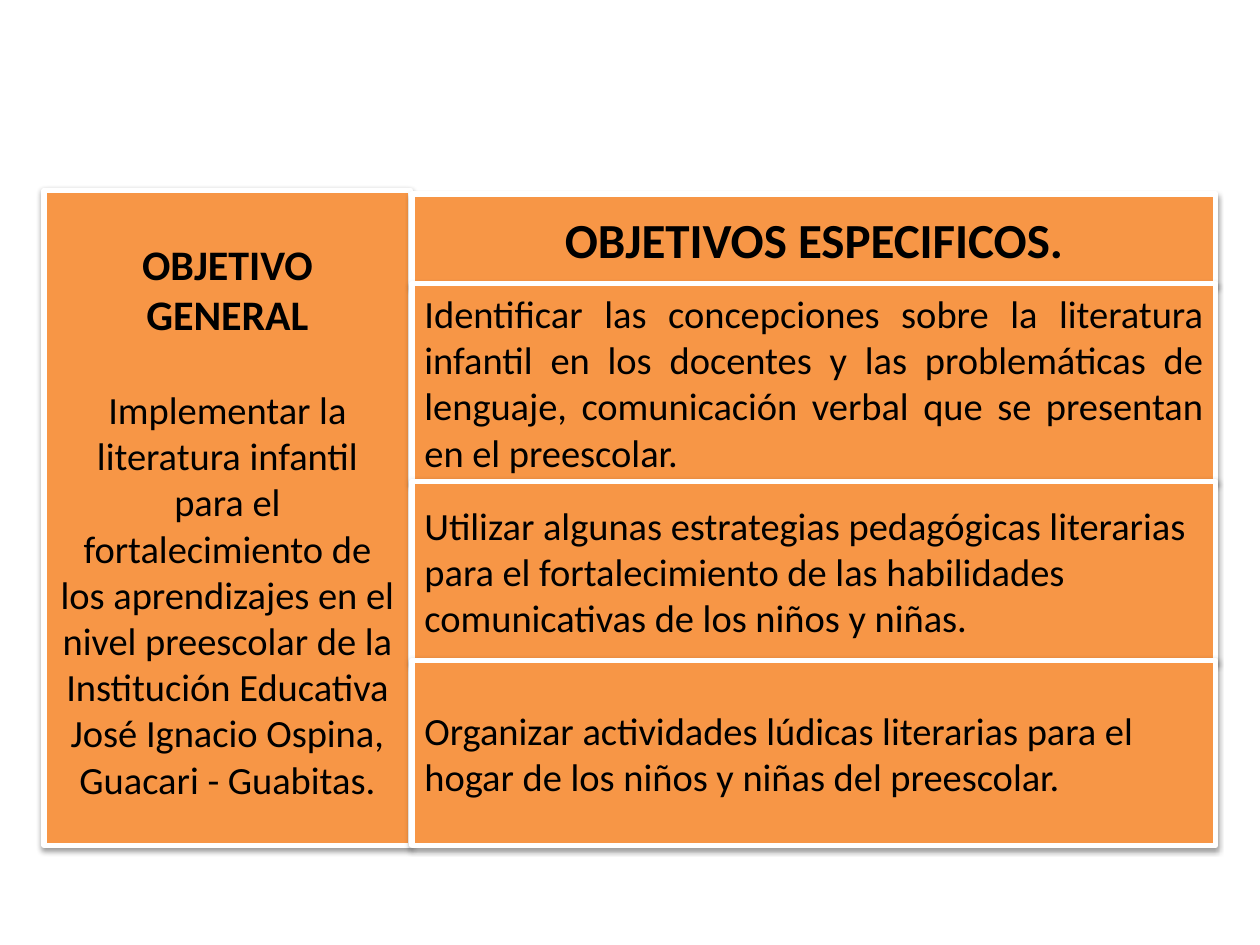
from dataclasses import dataclass

from lxml import etree
from pptx import Presentation
from pptx.dml.color import RGBColor
from pptx.enum.shapes import MSO_SHAPE as SHAPE
from pptx.enum.text import MSO_ANCHOR as ANCHOR, PP_ALIGN as ALIGN
from pptx.oxml import parse_xml
from pptx.oxml.ns import nsdecls
from pptx.util import Inches, Pt

ORANGE = RGBColor(0xF7, 0x96, 0x46)
WHITE = RGBColor(0xFF, 0xFF, 0xFF)
BLACK = RGBColor(0x00, 0x00, 0x00)
FONT = "Calibri"
SHADOW = (
    f'<a:effectLst {nsdecls("a")}>'
    '<a:outerShdw blurRad="40000" dist="20000" dir="5400000" rotWithShape="0">'
    '<a:srgbClr val="000000"><a:alpha val="38000"/></a:srgbClr>'
    '</a:outerShdw></a:effectLst>'
)


@dataclass
class Para:
    text: str
    size: int = 22
    bold: bool = False
    align: ALIGN = ALIGN.LEFT
    before: int = 0


@dataclass
class Row:
    height: float
    para: Para


GENERAL = [
    Para("OBJETIVO GENERAL", 24, True, ALIGN.CENTER),
    Para("Implementar la literatura infantil para el fortalecimiento de los "
         "aprendizajes en el nivel preescolar de la Institución Educativa "
         "José Ignacio Ospina, Guacari - Guabitas.",
         align=ALIGN.CENTER, before=27),
]
SPECIFIC = [
    Row(0.71, Para("OBJETIVOS ESPECIFICOS.", 28, True, ALIGN.CENTER)),
    Row(1.57, Para("Identificar las concepciones sobre la literatura infantil en "
                   "los docentes y las problemáticas de lenguaje, comunicación "
                   "verbal que se presentan en el preescolar.",
                   align=ALIGN.JUSTIFY)),
    Row(1.42, Para("Utilizar algunas estrategias pedagógicas literarias para el "
                   "fortalecimiento de las habilidades comunicativas de los "
                   "niños y niñas.")),
    Row(1.47, Para("Organizar actividades lúdicas literarias para el hogar de "
                   "los niños y niñas del preescolar.")),
]


def add_box(slide, left: float, top: float, width: float, height: float,
            paras: list[Para]):
    """Draw an orange box with a white border, a soft shadow and its text."""
    sp = slide.shapes.add_shape(SHAPE.RECTANGLE, Inches(left), Inches(top),
                                Inches(width), Inches(height))
    sp.fill.solid()
    sp.fill.fore_color.rgb = ORANGE
    sp.line.color.rgb = WHITE
    sp.line.width = Pt(3)
    sp.shadow.inherit = False
    effects = sp._element.spPr.find(etree.QName(parse_xml(SHADOW)).text)
    effects.getparent().replace(effects, parse_xml(SHADOW))

    tf = sp.text_frame
    tf.word_wrap = True
    tf.vertical_anchor = ANCHOR.MIDDLE
    for i, para in enumerate(paras):
        p = tf.paragraphs[0] if i == 0 else tf.add_paragraph()
        p.alignment = para.align
        if para.before:
            p.space_before = Pt(para.before)
        r = p.add_run()
        r.text = para.text
        r.font.name = FONT
        r.font.size = Pt(para.size)
        r.font.bold = para.bold
        r.font.color.rgb = BLACK
    return sp


def main() -> None:
    prs = Presentation()
    prs.slide_width, prs.slide_height = Inches(10), Inches(7.5)
    slide = prs.slides.add_slide(prs.slide_layouts[6])

    # General objective, set from the top of its column
    general = add_box(slide, 0.35, 1.51, 2.91, 5.2, GENERAL)
    tf = general.text_frame
    tf.vertical_anchor = ANCHOR.TOP
    tf.margin_top = Inches(0.38)
    tf.margin_left = tf.margin_right = Inches(0.11)

    # Specific objectives, stacked without gaps
    top = 1.54
    for row in SPECIFIC:
        add_box(slide, 3.27, top, 6.38, row.height, [row.para])
        top += row.height

    prs.save("out.pptx")


if __name__ == "__main__":
    main()
